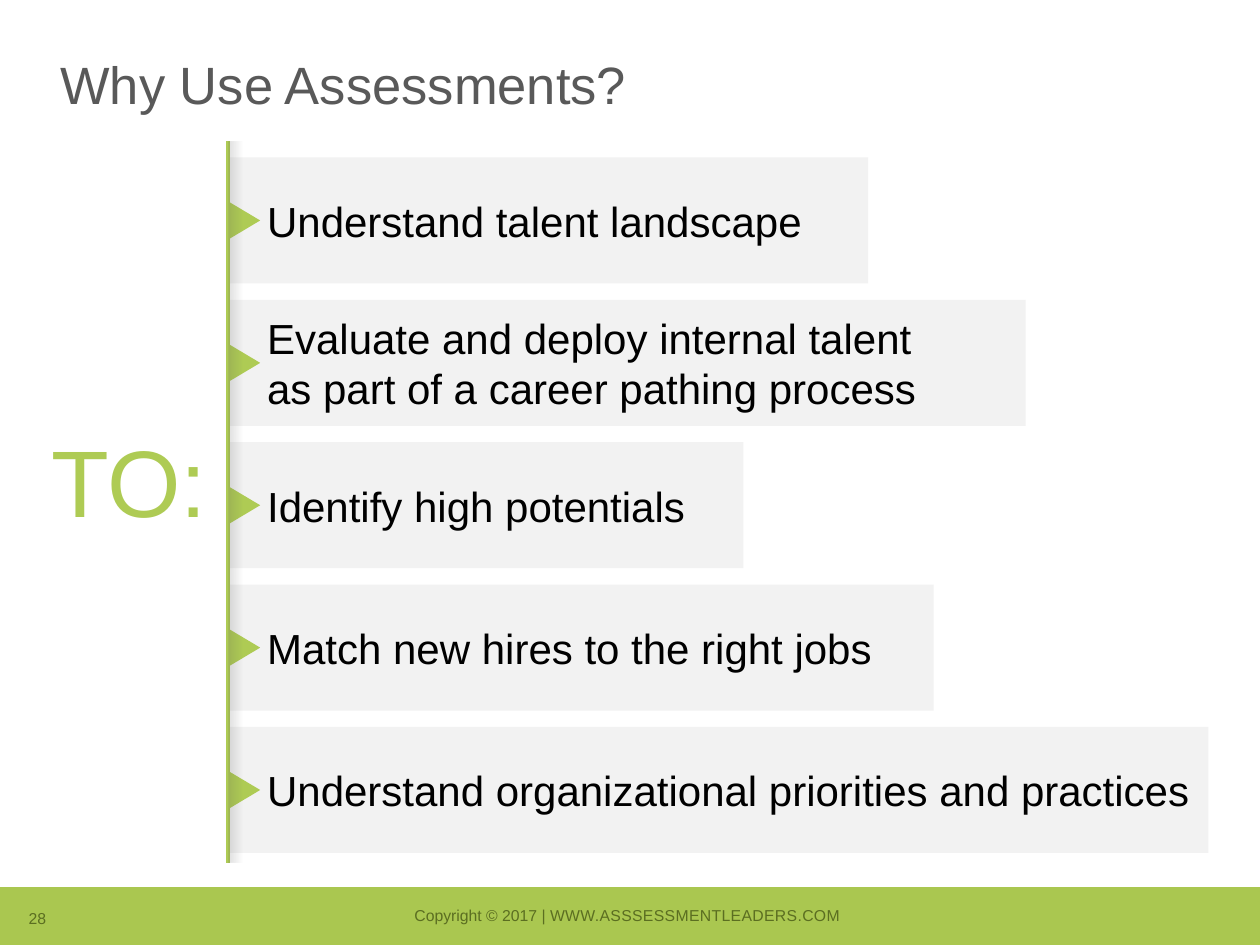
import pptx
import pptx.dml.color
import pptx.enum.shapes
import pptx.enum.text
import pptx.oxml.ns
import pptx.util
from lxml import etree

Inches = pptx.util.Inches
Pt = pptx.util.Pt
qn = pptx.oxml.ns.qn
Shape = pptx.enum.shapes.MSO_SHAPE
Anchor = pptx.enum.text.MSO_ANCHOR
Align = pptx.enum.text.PP_ALIGN

COLORS = {"band": "AAC750", "lime": "AECB54", "olive": "5B6E21",
          "pale": "F2F2F2", "gray": "595959", "black": "000000"}

REASONS = [
    ("Understand talent landscape", 5.07),
    ("Evaluate and deploy internal talent \vas part of a career pathing process", 6.32),
    ("Identify high potentials", 4.08),
    ("Match new hires to the right jobs", 5.59),
    ("Understand organizational priorities and practices", 7.77),
]


def color(name):
    return pptx.dml.color.RGBColor.from_string(COLORS[name])


def write(frame, *parts, size=24, ink="black", align=Align.LEFT,
          anchor=Anchor.TOP, wrap=False, inset=0.1, space=None):
    """Fill a frame with one paragraph; the last part may be spaced out."""
    frame.word_wrap = wrap
    frame.vertical_anchor = anchor
    frame.margin_left, frame.margin_right = Inches(inset), Inches(0.1)
    frame.margin_top = frame.margin_bottom = Inches(0.05)
    para = frame.paragraphs[0]
    para.text = parts[0]
    for part in parts[1:]:
        para.add_run().text = part
    para.alignment = align
    for run in para.runs:
        run.font.name = "Arial"
        run.font.size = Pt(size)
        run.font.color.rgb = color(ink)
    if space:
        para.runs[-1].font._element.set("spc", str(space))
    return para


class Deck:
    def __init__(self):
        self.show = pptx.Presentation()
        self.show.slide_width = Inches(10)
        self.show.slide_height = Inches(7.5)
        self.slide = self.show.slides.add_slide(self.show.slide_layouts[5])

    def title(self, text, *box):
        item = self.slide.shapes.title
        item.left, item.top, item.width, item.height = map(Inches, box)
        para = write(item.text_frame, text, size=30, ink="gray", wrap=True)
        para.line_spacing = 0.9

    def shape(self, kind, fill, *box, turn=0):
        item = self.slide.shapes.add_shape(kind, *map(Inches, box))
        item.shadow.inherit = False
        item.fill.solid()
        item.fill.fore_color.rgb = color(fill)
        item.line.fill.background()
        item.rotation = turn
        return item

    def label(self, box, *parts, **style):
        item = self.slide.shapes.add_textbox(*map(Inches, box))
        write(item.text_frame, *parts, **style)

    def line(self, x, top, end):
        item = self.slide.shapes.add_connector(
            pptx.enum.shapes.MSO_CONNECTOR.STRAIGHT,
            Inches(x), Inches(top), Inches(x), Inches(end))
        item.line.color.rgb = color("lime")
        item.line.width = Pt(2)
        etree.SubElement(item._element.spPr, qn("a:effectLst"))

    def shade(self, *box):
        item = self.shape(Shape.RECTANGLE, "gray", *box, turn=270)
        item.fill.gradient()
        item.fill.gradient_angle = 270
        for stop, place, alpha in zip(item.fill.gradient_stops, (0.08, 1), (18, 0)):
            stop.position = place
            stop.color.rgb = color("gray")
            tint = stop._gs.find(qn("a:srgbClr"))
            etree.SubElement(tint, qn("a:alpha")).set("val", str(alpha * 1000))


def main():
    deck = Deck()

    # Footer band
    deck.shape(Shape.RECTANGLE, "band", 0, 7.04, 10, 0.46)
    foot = {"size": 9, "ink": "olive", "anchor": Anchor.BOTTOM}
    deck.label((3.17, 7.14, 3.65, 0.25), "Copyright © 2017 | ",
               "WWW.ASSSESSMENTLEADERS.COM ", align=Align.CENTER, space=20, **foot)
    deck.label((0.13, 7.16, 0.36, 0.25), "28", **foot)

    # Reason bars with their pointers
    for row, (text, width) in enumerate(REASONS):
        top = 1.25 + row * 1.13
        bar = deck.shape(Shape.RECTANGLE, "pale", 1.82, top, width, 1)
        write(bar.text_frame, text, anchor=Anchor.MIDDLE, inset=0.3)
        deck.shape(Shape.ISOSCELES_TRIANGLE, "lime",
                   1.78, top + 0.37, 0.31, 0.26, turn=90)

    # Heading and lead word
    deck.label((0.31, 3.31, 2.82, 1.01), "TO:", size=54, ink="lime", wrap=True)
    deck.title("Why Use Assessments?", 0.38, 0.42, 9.25, 0.83)

    # Spine and its soft shade
    deck.line(1.81, 1.12, 6.85)
    deck.shade(-0.99, 3.93, 5.72, 0.11)

    deck.show.save("out.pptx")


if __name__ == "__main__":
    main()
